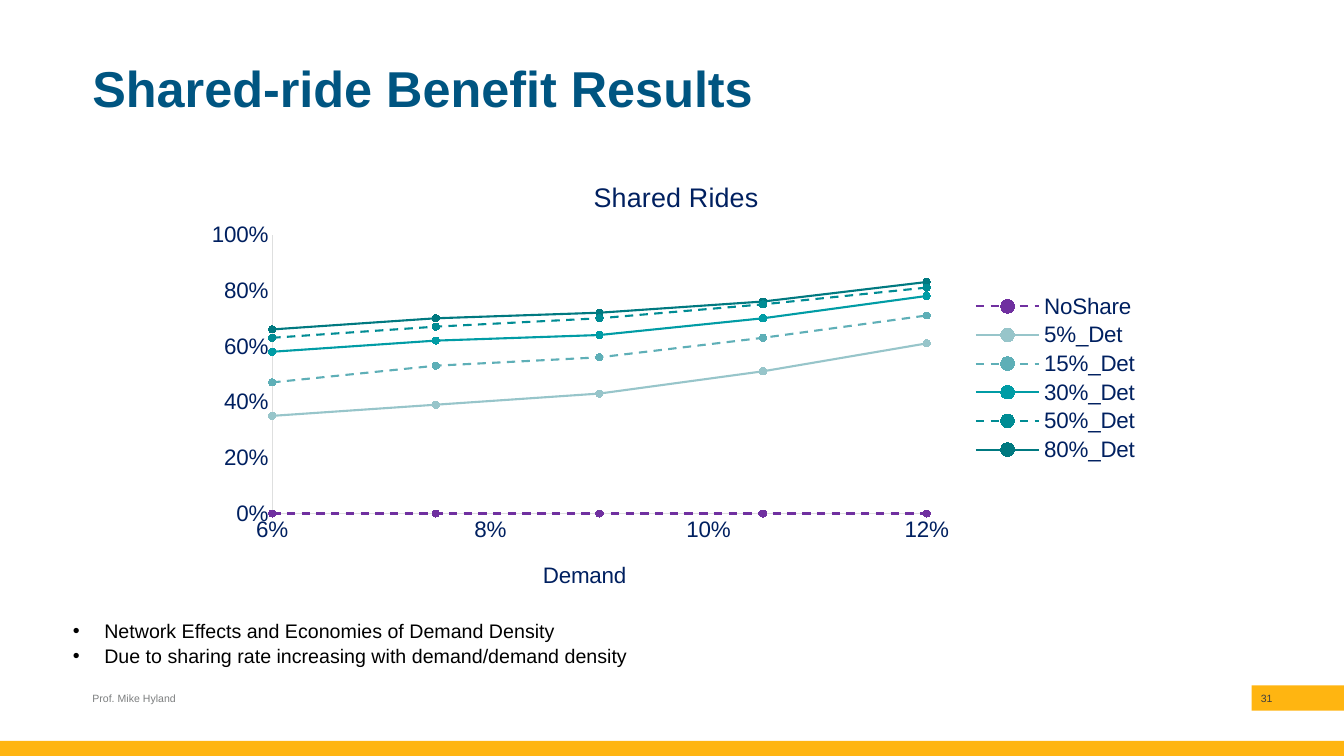
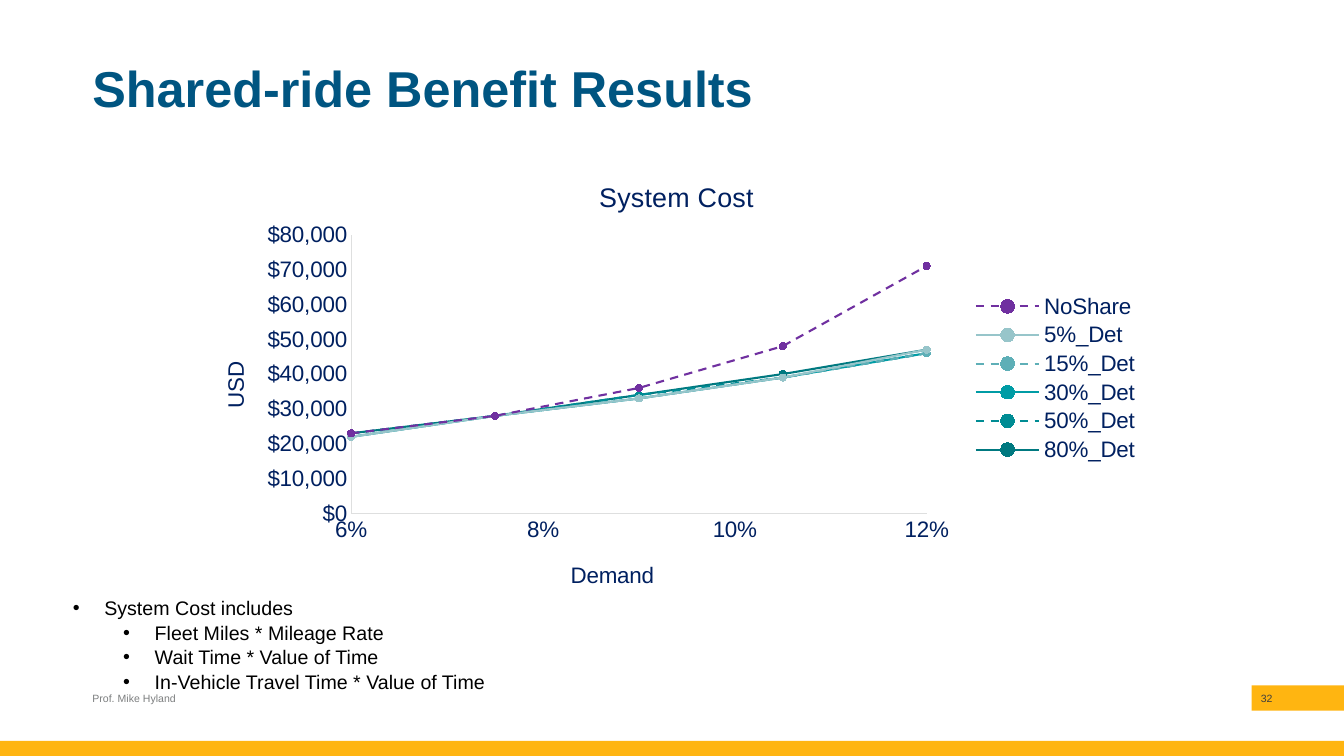
from pptx import Presentation
from pptx.chart.data import XyChartData
from pptx.dml.color import RGBColor
from pptx.enum.chart import XL_CHART_TYPE, XL_LEGEND_POSITION, XL_MARKER_STYLE, XL_TICK_MARK
from pptx.enum.dml import MSO_LINE
from pptx.enum.shapes import MSO_SHAPE
from pptx.enum.text import MSO_ANCHOR, MSO_AUTO_SIZE, PP_ALIGN
from pptx.oxml import parse_xml
from pptx.oxml.ns import nsdecls, qn
from pptx.oxml.xmlchemy import OxmlElement
from pptx.util import Pt

SMOOTH_SCATTER = XL_CHART_TYPE.XY_SCATTER_SMOOTH
LEGEND_RIGHT = XL_LEGEND_POSITION.RIGHT
CIRCLE = XL_MARKER_STYLE.CIRCLE
NO_TICK = XL_TICK_MARK.NONE
DASH = MSO_LINE.DASH
RECTANGLE = MSO_SHAPE.RECTANGLE
MIDDLE, TOP = MSO_ANCHOR.MIDDLE, MSO_ANCHOR.TOP
NO_AUTOFIT = MSO_AUTO_SIZE.NONE
LEFT, CENTER = PP_ALIGN.LEFT, PP_ALIGN.CENTER

GOLD = RGBColor(0xFF, 0xB5, 0x11)
TITLE_BLUE = RGBColor(0x00, 0x55, 0x81)
CHART_NAVY = RGBColor(0x00, 0x20, 0x60)
AXIS_GRAY = RGBColor(0xDE, 0xDF, 0xDF)
NUMBER_GRAY = RGBColor(0x3E, 0x3F, 0x3F)
FOOTER_GRAY = RGBColor(0x7C, 0x7E, 0x7F)
BLACK = RGBColor(0x00, 0x00, 0x00)
PURPLE = RGBColor(0x70, 0x30, 0xA0)
TEAL_5 = RGBColor(0x97, 0xC5, 0xCA)
TEAL_15 = RGBColor(0x5E, 0xAF, 0xB7)
TEAL_30 = RGBColor(0x00, 0x9C, 0xA5)
TEAL_50 = RGBColor(0x00, 0x8C, 0x94)
TEAL_80 = RGBColor(0x00, 0x79, 0x80)

FONT = "Arial"
FOOTER_TOP, FOOTER_HEIGHT = 489.6, 18
MARGIN = 66
DEMAND = (0.06, 0.075, 0.09, 0.105, 0.12)
SERIES_STYLES = (
    ("NoShare", PURPLE, True),
    ("5%_Det", TEAL_5, False),
    ("15%_Det", TEAL_15, True),
    ("30%_Det", TEAL_30, False),
    ("50%_Det", TEAL_50, True),
    ("80%_Det", TEAL_80, False),
)
SHARED_RIDES = (
    (0, 0, 0, 0, 0),
    (0.35, 0.39, 0.43, 0.51, 0.61),
    (0.47, 0.53, 0.56, 0.63, 0.71),
    (0.58, 0.62, 0.64, 0.70, 0.78),
    (0.63, 0.67, 0.70, 0.75, 0.81),
    (0.66, 0.70, 0.72, 0.76, 0.83),
)
SYSTEM_COST = (
    (23000, 28000, 36000, 48000, 71000),
    (22000, 28000, 33000, 39000, 47000),
    (22000, 28000, 33000, 39000, 46000),
    (22000, 28000, 33000, 39000, 46000),
    (23000, 28000, 34000, 39000, 46000),
    (23000, 28000, 34000, 40000, 47000),
)


def style_font(font, size, color, bold=False):
    font.name = FONT
    font.size = Pt(size)
    font.bold = bold
    font.color.rgb = color


def write_text(paragraph, text, size=16, color=CHART_NAVY, bold=False,
               alignment=None, line_spacing=None):
    run = paragraph.add_run()
    run.text = text
    style_font(run.font, size, color, bold)
    if alignment is not None:
        paragraph.alignment = alignment
    if line_spacing is not None:
        paragraph.line_spacing = line_spacing


def place(shape, left, top, width, height):
    shape.left, shape.top = Pt(left), Pt(top)
    shape.width, shape.height = Pt(width), Pt(height)


def prepare_frame(frame, anchor=MIDDLE, side_inset=0):
    frame.word_wrap = True
    frame.auto_size = NO_AUTOFIT
    frame.vertical_anchor = anchor
    frame.margin_left = frame.margin_right = Pt(side_inset)
    frame.margin_top = frame.margin_bottom = Pt(3.6)


def set_chart_layout(element, **fractions):
    """Fix a chart part at x, y (and w, h) given as fractions of the chart."""
    layout = element.find(qn("c:layout"))
    if layout is None:
        layout = OxmlElement("c:layout")
        element.insert(len(element.findall(qn("c:tx"))), layout)
    layout.clear()
    settings = {"xMode": "edge", "yMode": "edge", **fractions}
    if "w" in fractions:
        settings = {"layoutTarget": "inner", **settings}
    manual = OxmlElement("c:manualLayout")
    for name, value in settings.items():
        setting = OxmlElement("c:" + name)
        setting.set("val", str(value))
        manual.append(setting)
    layout.append(manual)


def title_chart_part(title, text, position, size=16):
    write_text(title.text_frame.paragraphs[0], text, size=size)
    set_chart_layout(title.element, x=position[0], y=position[1])


def style_axis(axis, minimum, maximum, step, number_format):
    axis.minimum_scale, axis.maximum_scale, axis.major_unit = minimum, maximum, step
    axis.has_major_gridlines = False
    axis.major_tick_mark = axis.minor_tick_mark = NO_TICK
    axis.format.line.color.rgb = AXIS_GRAY
    axis.format.line.width = Pt(0.75)
    axis.tick_labels.number_format = number_format
    axis.tick_labels.number_format_is_linked = False
    style_font(axis.tick_labels.font, 16, CHART_NAVY)


def style_series(series, color, dashed):
    series.smooth = True
    series.format.line.color.rgb = color
    series.format.line.width = Pt(1.5)
    if dashed:
        series.format.line.dash_style = DASH
    series.marker.style = CIRCLE
    series.marker.size = 5
    series.marker.format.fill.solid()
    series.marker.format.fill.fore_color.rgb = color
    series.marker.format.line.color.rgb = color


class Deck:
    def __init__(self):
        self.presentation = Presentation()
        self.presentation.slide_width = Pt(960)
        self.presentation.slide_height = Pt(540)
        self.slide = None

    def add_slide(self, title, number):
        is_first = self.slide is None
        self.slide = self.presentation.slides.add_slide(self.presentation.slide_layouts[1])
        if is_first:
            self.add_master_band(101, 894, FOOTER_TOP, 66, FOOTER_HEIGHT)
            self.add_master_band(102, 0, 529.2, 960, 10.8)
        shape = self.slide.shapes.title
        place(shape, MARGIN, 46.8, 828, 36)
        prepare_frame(shape.text_frame)
        write_text(shape.text_frame.paragraphs[0], title, size=36, color=TITLE_BLUE,
                   bold=True, alignment=LEFT, line_spacing=0.9)
        self.add_footer_text(str(number), 894, 21.6, NUMBER_GRAY, CENTER)
        self.add_footer_text("Prof. Mike Hyland", MARGIN, 396, FOOTER_GRAY, LEFT)

    def add_master_band(self, shape_id, left, top, width, height):
        """Draw a gold band and move it to the back of the slide master."""
        band = self.slide.shapes.add_shape(RECTANGLE, Pt(left), Pt(top), Pt(width), Pt(height))
        band.shadow.inherit = False
        band.fill.solid()
        band.fill.fore_color.rgb = GOLD
        band.line.fill.background()
        band.element.nvSpPr.cNvPr.set("id", str(shape_id))
        self.presentation.slide_master.shapes.element.insert(2, band.element)

    def add_footer_text(self, text, left, width, color, alignment):
        shape = self.slide.shapes.add_textbox(
            Pt(left), Pt(FOOTER_TOP), Pt(width), Pt(FOOTER_HEIGHT))
        prepare_frame(shape.text_frame)
        write_text(shape.text_frame.paragraphs[0], text, size=7.5, color=color,
                   alignment=alignment)

    def add_list(self, items, top, height):
        """Fill the body placeholder with (level, text) items."""
        body = self.slide.placeholders[1]
        place(body, 44.8, top, 563, height)
        frame = body.text_frame
        prepare_frame(frame, anchor=TOP, side_inset=7.2)
        for index, (level, text) in enumerate(items):
            paragraph = frame.add_paragraph() if index else frame.paragraphs[0]
            paragraph.level = level
            paragraph.space_before = Pt(0)
            paragraph.space_after = Pt(0.8)
            write_text(paragraph, text, size=14, color=BLACK, alignment=LEFT, line_spacing=1.0)
            properties = paragraph._p.get_or_add_pPr()
            properties.set("marL", str(Pt(22.5 + 36 * level)))
            properties.set("indent", str(Pt(-22.5)))
            for bullet in (
                f'<a:buClr {nsdecls("a")}><a:srgbClr val="{BLACK}"/></a:buClr>',
                f'<a:buFont {nsdecls("a")} typeface="{FONT}"/>',
                f'<a:buChar {nsdecls("a")} char="•"/>',
            ):
                properties.append(parse_xml(bullet))

    def add_demand_chart(self, title, values, number_format, maximum, step,
                         plot_left, title_left, demand_left, value_title=None):
        """Draw the six series over demand; the *_left values are chart fractions."""
        data = XyChartData()
        for (name, _, _), row in zip(SERIES_STYLES, values):
            series = data.add_series(name)
            for demand, value in zip(DEMAND, row):
                series.add_data_point(demand, value)
        chart = self.slide.shapes.add_chart(
            SMOOTH_SCATTER, Pt(138), Pt(108), Pt(684), Pt(324), data).chart
        style_font(chart.font, 16, CHART_NAVY)

        plot = chart.plots[0]
        plot.vary_by_categories = False
        for series, (_, color, dashed) in zip(plot.series, SERIES_STYLES):
            style_series(series, color, dashed)
        style_axis(chart.category_axis, 0.06, 0.12, 0.02, "0%")
        style_axis(chart.value_axis, 0, maximum, step, number_format)

        chart.has_title = True
        title_chart_part(chart.chart_title, title, (title_left, 0.05), size=19.2)
        title_chart_part(chart.category_axis.axis_title, "Demand", (demand_left, 0.895))
        if value_title:
            axis_title = chart.value_axis.axis_title
            title_chart_part(axis_title, value_title, (0.025, 0.455))
            frame_properties = next(axis_title.element.iter(qn("a:bodyPr")))
            frame_properties.set("rot", "-5400000")
            frame_properties.set("vert", "horz")

        chart.has_legend = True
        chart.legend.position = LEGEND_RIGHT
        chart.legend.include_in_layout = False
        style_font(chart.legend.font, 16, CHART_NAVY)
        plot_area = next(chart.element.iter(qn("c:plotArea")))
        set_chart_layout(plot_area, x=plot_left, y=0.184, w=round(0.766 - plot_left, 4), h=0.615)


def main():
    deck = Deck()

    deck.add_slide("Shared-ride Benefit Results", 31)
    deck.add_demand_chart("Shared Rides", SHARED_RIDES, "0%", 1, 0.2,
                          plot_left=0.0825, title_left=0.413, demand_left=0.361)
    deck.add_list([
        (0, "Network Effects and Economies of Demand Density"),
        (0, "Due to sharing rate increasing with demand/demand density"),
    ], top=438.5, height=41)

    deck.add_slide("Shared-ride Benefit Results", 32)
    deck.add_demand_chart("System Cost", SYSTEM_COST, '"$"#,##0', 80000, 10000,
                          plot_left=0.165, title_left=0.419, demand_left=0.39,
                          value_title="USD")
    deck.add_list([
        (0, "System Cost includes"),
        (1, "Fleet Miles * Mileage Rate"),
        (1, "Wait Time * Value of Time"),
        (1, "In-Vehicle Travel Time * Value of Time"),
    ], top=422, height=117)

    deck.presentation.save("out.pptx")


if __name__ == "__main__":
    main()
